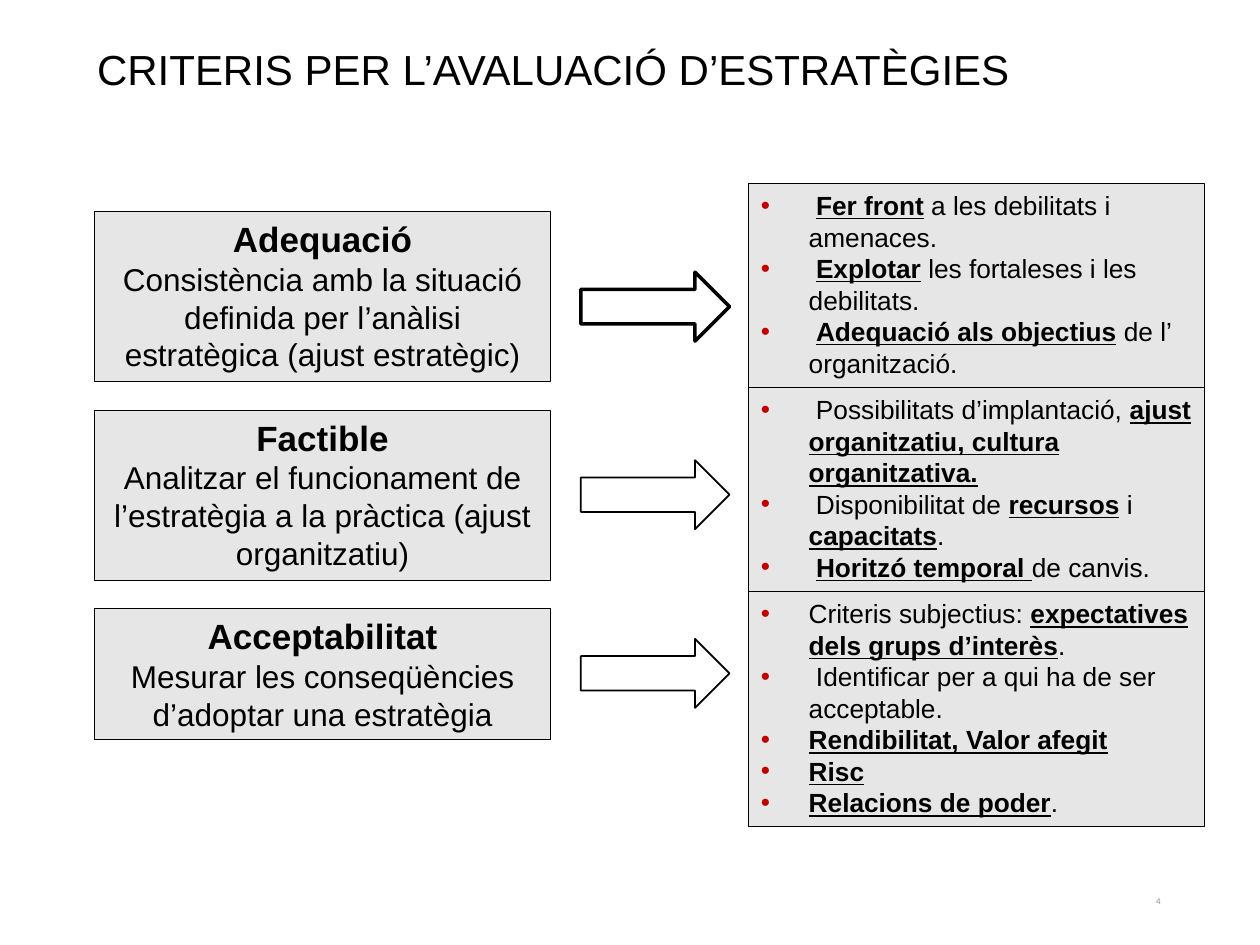
from dataclasses import dataclass

from lxml.etree import SubElement
from pptx import Presentation
from pptx.dml.color import RGBColor
from pptx.enum.shapes import MSO_SHAPE as Preset
from pptx.enum.text import MSO_ANCHOR as Anchor, MSO_AUTO_SIZE as AutoSize, PP_ALIGN as Align
from pptx.oxml.ns import qn
from pptx.util import Inches, Pt


@dataclass(frozen=True)
class Theme:
    ink: str = "000000"
    panel: str = "E7E6E6"
    bullet: str = "C00000"
    muted: str = "8C8C8C"
    font: str = "Arial"
    number_font: str = "Calibri"
    title: float = 24
    heading: float = 20
    body: float = 18
    detail: float = 15
    number: float = 5.1
    border: float = 0.75
    indent: float = 0.38


class Page:
    def __init__(self, deck, theme):
        self.deck = deck
        self.theme = theme
        self.slide = deck.slides.add_slide(deck.slide_layouts[5])

    def area(self, left, top, width, height):
        across, down = self.deck.slide_width / 100, self.deck.slide_height / 100
        return [int(v) for v in (left * across, top * down, width * across, height * down)]

    def add_text(self, paragraph, text, size, bold=False, underline=False, font=None, color=None):
        run = paragraph.add_run()
        run.text = text
        run.font.name = font or self.theme.font
        run.font.size = Pt(size)
        run.font.bold = bold
        run.font.underline = underline
        run.font.color.rgb = RGBColor.from_string(color or self.theme.ink)

    def title(self, text, *place):
        heading = self.slide.shapes.title
        heading.left, heading.top, heading.width, heading.height = self.area(*place)
        frame = heading.text_frame
        frame.word_wrap = True
        frame.auto_size = AutoSize.NONE
        frame.vertical_anchor = Anchor.TOP
        frame.paragraphs[0].alignment = Align.LEFT
        self.add_text(frame.paragraphs[0], text, self.theme.title)

    def outline(self, preset, place, weight):
        shape = self.slide.shapes.add_shape(preset, *self.area(*place))
        shape.shadow.inherit = False
        shape.fill.background()
        shape.line.color.rgb = RGBColor.from_string(self.theme.ink)
        shape.line.width = Pt(weight)
        return shape

    def panel(self, *place):
        shape = self.outline(Preset.RECTANGLE, place, self.theme.border)
        shape.fill.solid()
        shape.fill.fore_color.rgb = RGBColor.from_string(self.theme.panel)
        frame = shape.text_frame
        frame.word_wrap = True
        frame.vertical_anchor = Anchor.TOP
        return frame

    def criterion(self, name, meaning, *place):
        frame = self.panel(*place)
        heading, body = frame.paragraphs[0], frame.add_paragraph()
        heading.alignment = body.alignment = Align.CENTER
        self.add_text(heading, name, self.theme.heading, bold=True)
        self.add_text(body, meaning, self.theme.body)

    def arrow(self, weight, *place):
        self.outline(Preset.RIGHT_ARROW, place, weight)

    def details(self, points, *place):
        frame = self.panel(*place)
        for index, point in enumerate(points):
            paragraph = frame.add_paragraph() if index else frame.paragraphs[0]
            paragraph.alignment = Align.LEFT
            self.add_bullet(paragraph)
            for part, text in enumerate(point.split("*")):
                if text:
                    stressed = part % 2 == 1
                    self.add_text(paragraph, text, self.theme.detail, stressed, stressed)

    def add_bullet(self, paragraph):
        props = paragraph._p.get_or_add_pPr()
        indent = Inches(self.theme.indent)
        props.set("marL", str(indent))
        props.set("indent", str(-indent))
        color = SubElement(props, qn("a:buClr"))
        SubElement(color, qn("a:srgbClr"), val=self.theme.bullet)
        SubElement(props, qn("a:buFont"), typeface=self.theme.font)
        SubElement(props, qn("a:buChar"), char="•")

    def number(self, text, *place):
        frame = self.slide.shapes.add_textbox(*self.area(*place)).text_frame
        frame.word_wrap = True
        frame.vertical_anchor = Anchor.MIDDLE
        frame.paragraphs[0].alignment = Align.RIGHT
        self.add_text(frame.paragraphs[0], text, self.theme.number,
                      font=self.theme.number_font, color=self.theme.muted)


CRITERIA = [
    ("Adequació",
     "Consistència amb la situació definida per l’anàlisi estratègica (ajust estratègic)",
     18, 28.8, 2, 21.6,
     [" *Fer front* a les debilitats i amenaces.",
      " *Explotar* les fortaleses i les debilitats.",
      " *Adequació als objectius* de l’ organització."]),
    ("Factible",
     "Analitzar el funcionament de l’estratègia a la pràctica (ajust organitzatiu)",
     18, 48.7, 1, 21.6,
     [" Possibilitats d’implantació, *ajust organitzatiu, cultura organitzativa.*",
      " Disponibilitat de *recursos* i *capacitats*.",
      " *Horitzó temporal *de canvis."]),
    ("Acceptabilitat",
     "Mesurar les conseqüències d’adoptar una estratègia",
     13.9, 67.6, 1, 24.9,
     ["Criteris subjectius: *expectatives dels grups d’interès*.",
      " Identificar per a qui ha de ser acceptable.",
      "*Rendibilitat, Valor afegit*",
      "*Risc*",
      "*Relacions de poder*."]),
]


def main():
    deck = Presentation()
    deck.slide_width, deck.slide_height = Inches(10), Inches(7.5)
    page = Page(deck, Theme())
    page.title("CRITERIS PER L’AVALUACIÓ D’ESTRATÈGIES", 6.7, 3.9, 83.5, 6.7)
    page.number("4", 70.6, 92.7, 22.5, 5.3)

    panel_width, first_top, row_pitch = 36.2, 22.4, 21
    details_top = 19.4
    for row, criterion in enumerate(CRITERIA):
        name, meaning, height, arrow_top, weight, details_height, points = criterion
        page.criterion(name, meaning, 7.5, first_top + row * row_pitch, panel_width, height)
        page.arrow(weight, 46.1, arrow_top, 11.8, 7.3)
        page.details(points, 59.4, details_top, panel_width, details_height)
        details_top += details_height

    deck.save("out.pptx")


if __name__ == "__main__":
    main()
